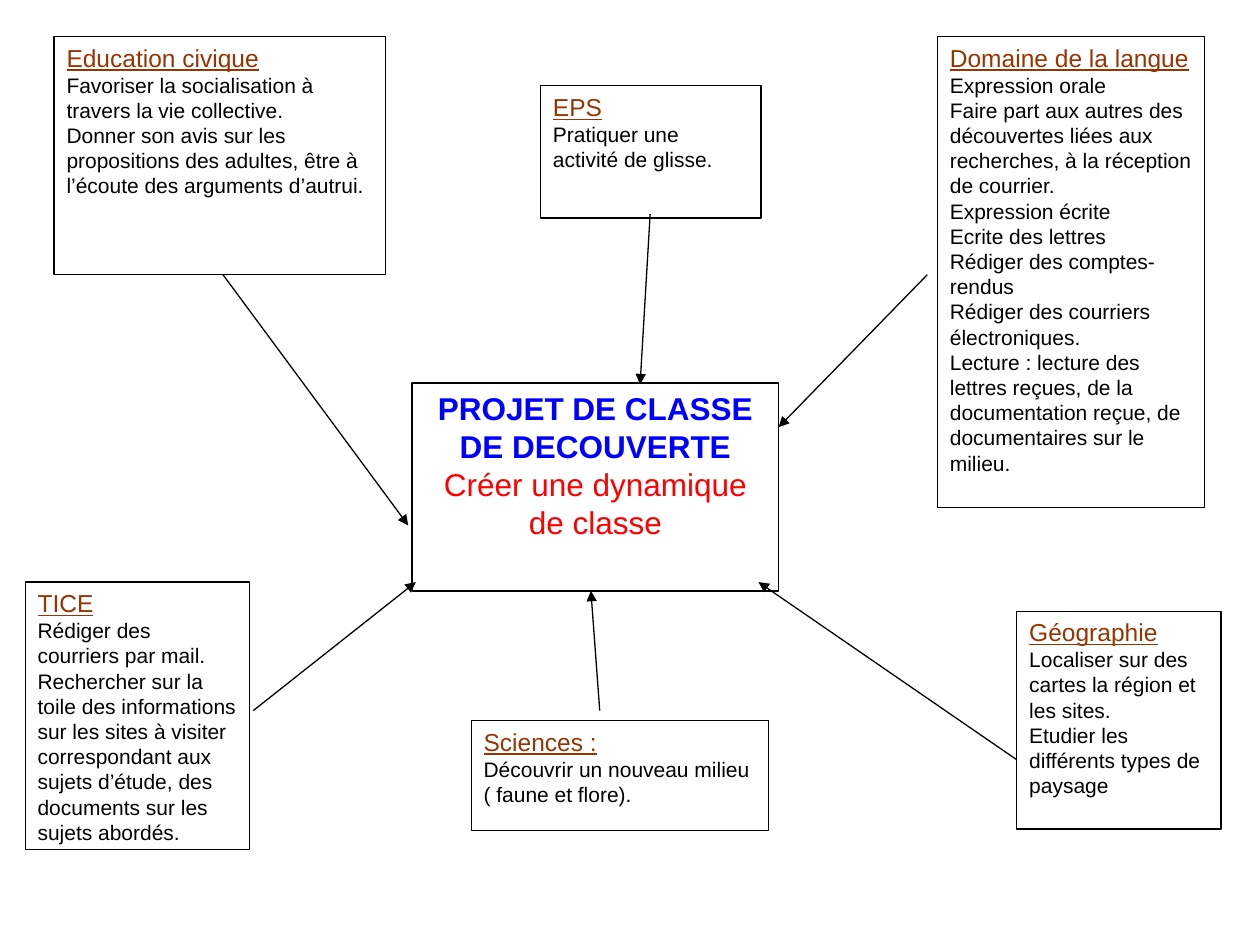
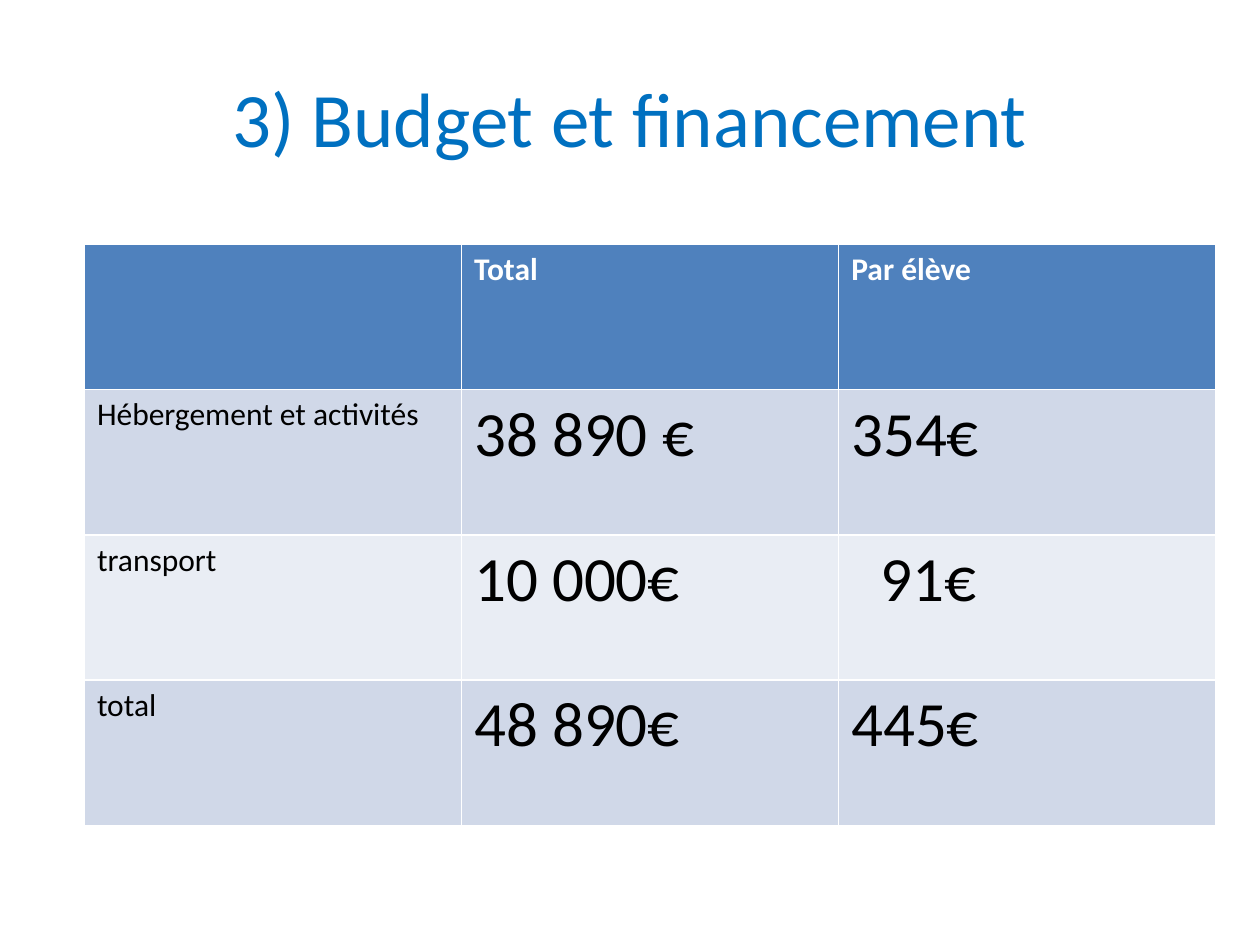
"""Build the class project map and its budget slide."""
from dataclasses import dataclass

from lxml.etree import SubElement
from pptx import Presentation
from pptx.dml.color import RGBColor
from pptx.enum.shapes import MSO_CONNECTOR, MSO_SHAPE
from pptx.enum.text import MSO_ANCHOR, PP_ALIGN
from pptx.oxml.ns import qn
from pptx.util import Inches, Pt

WIDTH, HEIGHT = Inches(10), Inches(7.5)


@dataclass(frozen=True)
class Theme:
    """Fonts, colours and point sizes shared by the slides."""
    map_font: str = "Arial"
    plan_font: str = "Calibri"
    ink: str = "000000"
    paper: str = "FFFFFF"
    topic: str = "993300"
    goal: str = "0000FF"
    aim: str = "FF0000"
    title: str = "0070C0"
    head: str = "4F81BD"
    bands: tuple[str, str] = ("D0D8E8", "E9EDF4")
    small: int = 12
    medium: int = 14
    large: int = 18
    sum_size: int = 36
    title_size: int = 44
    rule: float = 0.75


THEME = Theme()


@dataclass(frozen=True)
class Area:
    """A rectangle in percent of the slide's width and height."""
    left: float
    top: float
    width: float
    height: float

    def place(self) -> tuple[int, int, int, int]:
        """Return left, top, width and height as lengths."""
        return (across(self.left), down(self.top),
                across(self.width), down(self.height))


@dataclass(frozen=True)
class Style:
    """The look of one paragraph."""
    size: int
    color: str
    font: str = THEME.map_font
    bold: bool = False
    under: bool = False
    align: PP_ALIGN = PP_ALIGN.LEFT


@dataclass(frozen=True)
class Topic:
    """A school subject with its aims."""
    area: Area
    name: str
    aims: tuple[str, ...]


@dataclass(frozen=True)
class Arrow:
    """An arrow between two points in percent of the slide."""
    start: tuple[float, float]
    end: tuple[float, float]


NAME = Style(THEME.medium, THEME.topic, under=True)
AIM = Style(THEME.small, THEME.ink)
GOAL = Style(THEME.large, THEME.goal, bold=True, align=PP_ALIGN.CENTER)
DRIVE = Style(THEME.large, THEME.aim, align=PP_ALIGN.CENTER)
TITLE = Style(THEME.title_size, THEME.title, THEME.plan_font,
              align=PP_ALIGN.CENTER)
HEAD = Style(THEME.large, THEME.paper, THEME.plan_font, bold=True)
LABEL = Style(THEME.large, THEME.ink, THEME.plan_font)
SUM = Style(THEME.sum_size, THEME.ink, THEME.plan_font)

TOPICS = (
    Topic(Area(4.3, 3.87, 26.3, 25.2), "Education civique", (
        "Favoriser la socialisation à travers la vie collective.",
        "Donner son avis sur les propositions des adultes, être à l’écoute "
        "des arguments d’autrui.")),
    Topic(Area(2, 61.6, 17.8, 28.27), "TICE", (
        "Rédiger des courriers par mail.",
        "Rechercher sur la toile des informations sur les sites à visiter "
        "correspondant aux sujets d’étude, des documents sur les sujets "
        "abordés.")),
    Topic(Area(74.4, 3.87, 21.2, 49.87), "Domaine de la langue", (
        "Expression orale",
        "Faire part aux autres des découvertes liées aux recherches, à la "
        "réception de courrier.",
        "Expression écrite",
        "Ecrite des lettres",
        "Rédiger des comptes-rendus",
        "Rédiger des courriers électroniques.",
        "Lecture : lecture des lettres reçues, de la documentation reçue, "
        "de documentaires sur le milieu.")),
    Topic(Area(42.9, 9.07, 17.5, 14), "EPS", (
        "Pratiquer une activité de glisse.",)),
    Topic(Area(37.4, 76.27, 23.6, 11.6), "Sciences :", (
        "Découvrir un nouveau milieu ( faune et flore).",)),
    Topic(Area(80.7, 64.67, 16.2, 23.07), "Géographie", (
        "Localiser sur des cartes la région et les sites.",
        "Etudier les différents types de paysage")),
)

HUB = Area(32.7, 40.53, 29.1, 22)

ARROWS = (
    Arrow((17.7, 29.07), (32.4, 55.6)),
    Arrow((51.6, 22.67), (50.8, 40.67)),
    Arrow((73.6, 29.07), (61.8, 45.2)),
    Arrow((20.1, 75.2), (33, 61.6)),
    Arrow((47.6, 75.2), (46.9, 62.53)),
    Arrow((80.7, 80.4), (60.2, 61.6)),
)

BUDGET = (
    ("", "Total", "Par élève"),
    ("Hébergement et activités", "38 890 €", "354€"),
    ("transport", "10 000€", "91€"),
    ("total", "48 890€", "445€"),
)


def across(share: float) -> int:
    """Turn a percentage of the slide's width into a length."""
    return round(WIDTH * share / 100)


def down(share: float) -> int:
    """Turn a percentage of the slide's height into a length."""
    return round(HEIGHT * share / 100)


def color(code: str) -> RGBColor:
    """Read a colour code."""
    return RGBColor.from_string(code)


def write(frame, lines: list[tuple[str, Style]]) -> None:
    """Fill a text frame with one styled paragraph per line."""
    frame.text = "\n".join(text for text, _ in lines)
    for para, (_, style) in zip(frame.paragraphs, lines):
        para.alignment = style.align
        for run in para.runs:
            font = run.font
            font.name, font.size = style.font, Pt(style.size)
            font.bold, font.underline = style.bold, style.under
            font.color.rgb = color(style.color)


def add_box(slide, area: Area, lines: list[tuple[str, Style]]) -> None:
    """Draw a framed white box of text."""
    box = slide.shapes.add_shape(MSO_SHAPE.RECTANGLE, *area.place())
    box.shadow.inherit = False
    box.fill.solid()
    box.fill.fore_color.rgb = color(THEME.paper)
    box.line.color.rgb = color(THEME.ink)
    box.line.width = Pt(THEME.rule)
    frame = box.text_frame
    frame.word_wrap = True
    frame.vertical_anchor = MSO_ANCHOR.TOP
    write(frame, lines)


def add_arrow(slide, arrow: Arrow) -> None:
    """Draw a thin arrow with a triangular head."""
    (x1, y1), (x2, y2) = arrow.start, arrow.end
    link = slide.shapes.add_connector(
        MSO_CONNECTOR.STRAIGHT, across(x1), down(y1), across(x2), down(y2))
    link.line.color.rgb = color(THEME.ink)
    link.line.width = Pt(THEME.rule)
    SubElement(link.line._get_or_add_ln(), qn("a:tailEnd"), type="triangle")
    SubElement(link._element.spPr, qn("a:effectLst"))


def add_map(deck) -> None:
    """Add the slide linking the subjects to the project."""
    slide = deck.slides.add_slide(deck.slide_layouts.get_by_name("Blank"))
    for topic in TOPICS:
        add_box(slide, topic.area,
                [(topic.name, NAME), *((aim, AIM) for aim in topic.aims)])
    add_box(slide, HUB, [("PROJET DE CLASSE DE DECOUVERTE", GOAL),
                         ("Créer une dynamique de classe", DRIVE)])
    for arrow in ARROWS:
        add_arrow(slide, arrow)


def add_budget(deck) -> None:
    """Add the slide with the budget table."""
    slide = deck.slides.add_slide(deck.slide_layouts.get_by_name("Title Only"))
    title = slide.shapes.title
    title.left, title.top, title.width, title.height = Area(
        5, 4, 90, 16.67).place()
    title.text_frame.vertical_anchor = MSO_ANCHOR.MIDDLE
    write(title.text_frame, [("3) Budget et financement", TITLE)])
    area = Area(6.7, 25.87, 89.8, 61.47)
    table = slide.shapes.add_table(
        len(BUDGET), len(BUDGET[0]), *area.place()).table
    for row, texts in enumerate(BUDGET):
        for col, text in enumerate(texts):
            cell = table.cell(row, col)
            cell.fill.solid()
            cell.fill.fore_color.rgb = color(
                THEME.bands[(row - 1) % 2] if row else THEME.head)
            style = HEAD if row == 0 else SUM if col else LABEL
            write(cell.text_frame, [(text, style)])
    table.cell(2, 2).margin_left = across(3.3)


def main() -> None:
    """Build and save the deck."""
    deck = Presentation()
    deck.slide_width, deck.slide_height = WIDTH, HEIGHT
    add_map(deck)
    add_budget(deck)
    deck.save("out.pptx")


if __name__ == "__main__":
    main()
